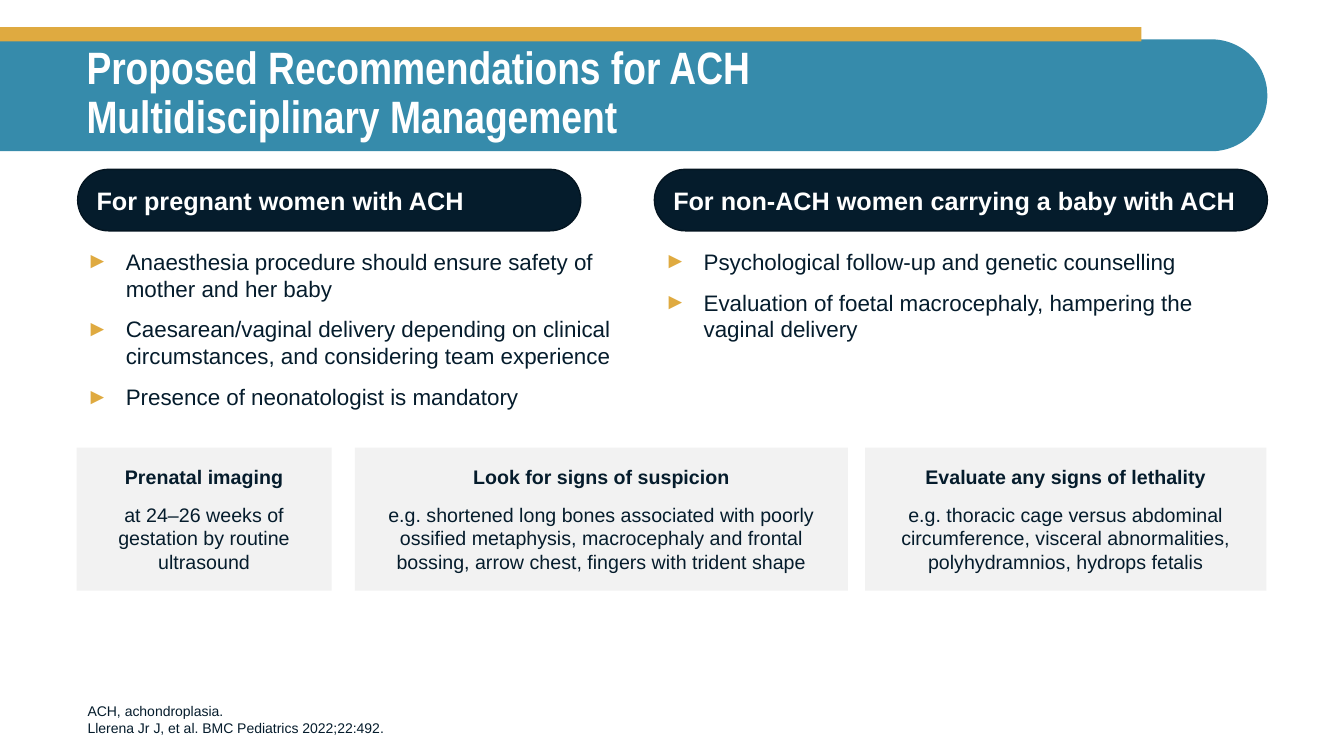
from lxml.etree import SubElement
from pptx import Presentation
from pptx.dml.color import RGBColor
from pptx.enum.shapes import MSO_SHAPE as Shape
from pptx.enum.text import MSO_ANCHOR as Anchor, PP_ALIGN as Align
from pptx.oxml.ns import qn
from pptx.util import Inches, Pt


def color(value):
    return RGBColor.from_string(value)


def write(frame, paragraphs, size, fill, font="Arial", bold=False, bold_first=False,
          align=Align.LEFT, anchor=Anchor.TOP, gap=0, line_spacing=None, bullet=None):
    frame.word_wrap = True
    frame.vertical_anchor = anchor
    for index, words in enumerate(paragraphs):
        paragraph = frame.paragraphs[0] if index == 0 else frame.add_paragraph()
        paragraph.text = words
        paragraph.alignment = align
        paragraph.space_before = Pt(gap if index else 0)
        if line_spacing:
            paragraph.line_spacing = line_spacing
        if bullet:
            props = paragraph._p.get_or_add_pPr()
            props.set("marL", str(Inches(0.39)))
            props.set("indent", str(-Inches(0.39)))
            bullet_color = SubElement(props, qn("a:buClr"))
            SubElement(bullet_color, qn("a:srgbClr"), val=bullet)
            SubElement(props, qn("a:buFont"), typeface="Arial")
            SubElement(props, qn("a:buChar"), char="►")
        for run in paragraph.runs:
            run.font.name = font
            run.font.size = Pt(size)
            run.font.bold = bold or (bold_first and index == 0)
            run.font.color.rgb = color(fill)


class Deck:
    TEAL = "368BAB"
    GOLD = "DFAA40"
    NAVY = "051C2C"
    NAVY_EDGE = "041521"
    GREY = "F2F2F2"
    WHITE = "FFFFFF"

    def __init__(self):
        self.presentation = Presentation()
        self.presentation.slide_width = Inches(13.33)
        self.presentation.slide_height = Inches(7.5)
        self.slide = self.presentation.slides.add_slide(self.presentation.slide_layouts[6])

    def block(self, kind, left, top, width, height, fill, edge=None):
        block = self.slide.shapes.add_shape(
            kind, Inches(left), Inches(top), Inches(width), Inches(height))
        block.shadow.inherit = False
        block.fill.solid()
        block.fill.fore_color.rgb = color(fill)
        if edge:
            block.line.color.rgb = color(edge)
            block.line.width = Pt(1)
        else:
            block.line.fill.background()
        return block

    def text(self, left, top, width, height, paragraphs, size, fill, **style):
        box = self.slide.shapes.add_textbox(
            Inches(left), Inches(top), Inches(width), Inches(height))
        write(box.text_frame, paragraphs, size, fill, **style)

    def banner(self, title):
        band = self.block(Shape.ROUND_2_SAME_RECTANGLE, 5.73, -5.34, 1.11, 12.57, self.TEAL)
        band.adjustments[0] = 0
        band.adjustments[1] = 0.5
        band.rotation = 270
        self.block(Shape.RECTANGLE, 0, 0.27, 11.32, 0.14, self.GOLD)
        self.text(0.76, 0.39, 11.81, 1.1, [title], 32.4, self.WHITE, font="Arial Narrow",
                  bold=True, anchor=Anchor.MIDDLE, line_spacing=0.9)

    def heading(self, left, width, label):
        pill = self.block(Shape.ROUNDED_RECTANGLE, left, 1.68, width, 0.61,
                          self.NAVY, self.NAVY_EDGE)
        pill.adjustments[0] = 0.5
        write(pill.text_frame, [label], 18, self.WHITE, bold=True, anchor=Anchor.MIDDLE)

    def bullets(self, left, width, height, items):
        self.text(left, 2.41, width, height, items, 16, self.NAVY, gap=10, bullet=self.GOLD)

    def card(self, left, width, label, detail):
        card = self.block(Shape.RECTANGLE, left, 4.44, width, 1.42, self.GREY)
        write(card.text_frame, [label, detail], 14, self.NAVY, bold_first=True,
              align=Align.CENTER, anchor=Anchor.MIDDLE, gap=10)

    def footnote(self, lines):
        self.text(0.77, 6.79, 9.88, 0.56, lines, 10, self.NAVY, anchor=Anchor.BOTTOM)


def main():
    deck = Deck()
    deck.banner("Proposed Recommendations for ACH\vMultidisciplinary Management")

    deck.heading(0.77, 4.99, "For pregnant women with ACH")
    deck.bullets(0.76, 5.47, 3.45, [
        "Anaesthesia procedure should ensure safety of mother and her baby",
        "Caesarean/vaginal delivery depending on clinical circumstances, "
        "and considering team experience",
        "Presence of neonatologist is mandatory",
    ])

    deck.heading(6.49, 6.08, "For non-ACH women carrying a baby with ACH")
    deck.bullets(6.49, 6.09, 1.73, [
        "Psychological follow-up and genetic counselling",
        "Evaluation of foetal macrocephaly, hampering the vaginal delivery",
    ])

    screening_steps = [
        (0.76, 2.53, "Prenatal imaging",
         "at 24–26 weeks of gestation by routine ultrasound"),
        (3.52, 4.89, "Look for signs of suspicion",
         "e.g. shortened long bones associated with poorly ossified metaphysis, "
         "macrocephaly and frontal bossing, arrow chest, fingers with trident shape"),
        (8.58, 3.98, "Evaluate any signs of lethality",
         "e.g. thoracic cage versus abdominal circumference, visceral abnormalities, "
         "polyhydramnios, hydrops fetalis"),
    ]
    for step in screening_steps:
        deck.card(*step)

    deck.footnote(["ACH, achondroplasia.",
                   "Llerena Jr J, et al. BMC Pediatrics 2022;22:492."])
    deck.presentation.save("out.pptx")


if __name__ == "__main__":
    main()
